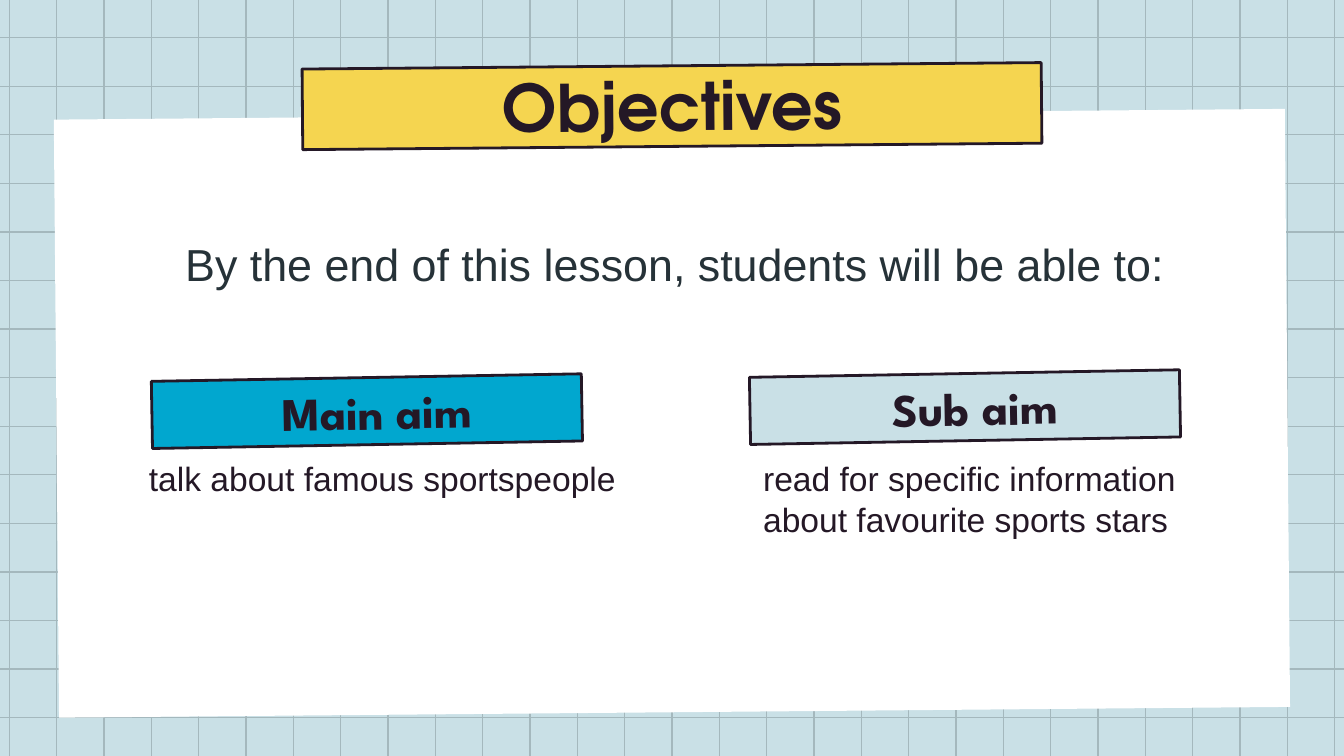
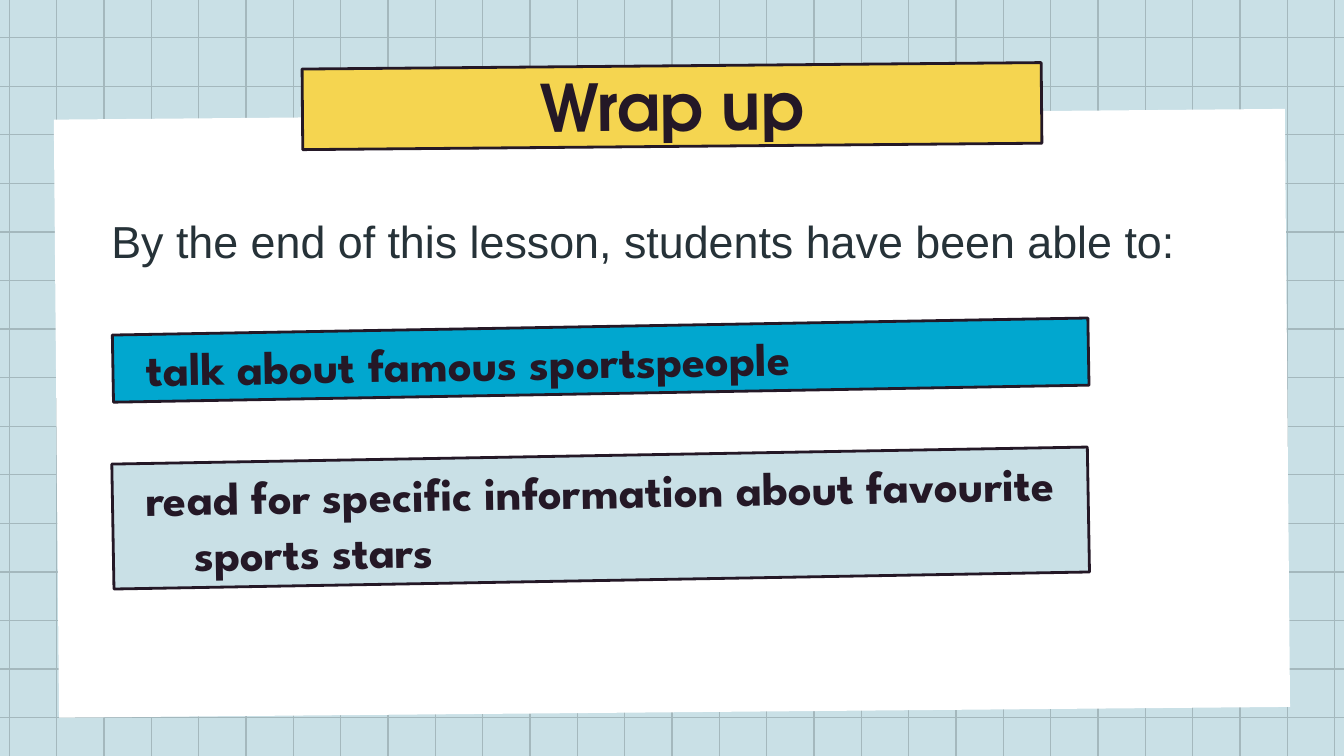
from pptx import Presentation
from pptx.dml.color import RGBColor
from pptx.enum.shapes import MSO_CONNECTOR, MSO_SHAPE
from pptx.enum.text import MSO_ANCHOR, PP_ALIGN
from pptx.oxml.ns import qn
from pptx.util import Inches, Pt
from lxml.etree import SubElement

SLIDE_WIDTH = 10
SLIDE_HEIGHT = SLIDE_WIDTH * 9 / 16
INK = "241826"
SLATE = "263238"
PALE_BLUE = "C9E0E6"
BLUE = "01A7CF"
YELLOW = "F5D550"
WHITE = "FFFFFF"
GRID = "A4B8BD"
TITLE_FONT = "TeX Gyre Adventor"
LABEL_FONT = "League Spartan"
BODY_FONT = "Arial"


def color(value):
    return RGBColor.from_string(value)


def add_grid_line(group, *ends):
    line = group.shapes.add_connector(
        MSO_CONNECTOR.STRAIGHT, *[Inches(end) for end in ends]
    )
    line.line.color.rgb = color(GRID)
    line.line.width = Pt(0.75)
    SubElement(line._element.spPr, qn("a:effectLst"))


def add_grid(slide):
    group = slide.shapes.add_group_shape()
    columns, rows = 28, 14
    for column in range(columns + 1):
        x = 0.07 + column * (9.93 - 0.07) / columns
        add_grid_line(group, x, -0.05, x, 5.7)
    for row in range(rows + 1):
        y = 0.28 + row * (5.34 - 0.28) / rows
        add_grid_line(group, -0.16, y, 10.15, y)


def add_band(slide, box, fill, rotation, outline=INK):
    band = slide.shapes.add_shape(
        MSO_SHAPE.RECTANGLE, *[Inches(length) for length in box]
    )
    band.shadow.inherit = False
    band.rotation = rotation
    band.fill.solid()
    band.fill.fore_color.rgb = color(fill)
    if outline:
        band.line.color.rgb = color(outline)
        band.line.width = Pt(1.5)
    else:
        band.line.fill.background()
    return band


def write(shape, text, size, font, ink=INK, bold=False, align=PP_ALIGN.LEFT,
          anchor=MSO_ANCHOR.TOP, inset=(0.1, 0.1), hanging=False):
    frame = shape.text_frame
    frame.word_wrap = True
    frame.vertical_anchor = anchor
    frame.margin_left = frame.margin_right = Inches(inset[0])
    frame.margin_top = frame.margin_bottom = Inches(inset[1])
    paragraph = frame.paragraphs[0]
    paragraph.alignment = align
    if hanging:
        properties = paragraph._p.get_or_add_pPr()
        properties.set("marL", str(Inches(0.5)))
        properties.set("indent", str(Inches(-0.35)))
    run = paragraph.add_run()
    run.text = text
    run.font.size = Pt(size)
    run.font.name = font
    run.font.bold = bold
    run.font.color.rgb = color(ink)


def add_label(slide, box, fill, text, align=PP_ALIGN.LEFT):
    label = add_band(slide, box, fill, 359)
    write(label, text, 25, LABEL_FONT, bold=True, align=align,
          anchor=MSO_ANCHOR.MIDDLE, hanging=True)


def add_text(slide, box, text, size, **style):
    text_box = slide.shapes.add_textbox(*[Inches(length) for length in box])
    write(text_box, text, size, BODY_FONT, **style)


def add_lead(slide, box, text):
    add_text(slide, box, text, 24, ink=SLATE, inset=(0.1, 0.05))


def add_page(presentation, title):
    slide = presentation.slides.add_slide(presentation.slide_layouts[6])
    slide.background.fill.solid()
    slide.background.fill.fore_color.rgb = color(PALE_BLUE)
    add_grid(slide)
    add_band(slide, (0.42, 0.85, 9.16, 4.45), WHITE, 359.5, outline=None)
    banner = add_band(slide, (2.25, 0.49, 5.5, 0.6), YELLOW, 359.5)
    write(banner, title, 35, TITLE_FONT, bold=True,
          align=PP_ALIGN.CENTER, inset=(0, 0))
    return slide


def add_objectives(presentation):
    slide = add_page(presentation, "Objectives")
    add_label(slide, (1.13, 2.81, 3.2, 0.5), BLUE, "Main aim", PP_ALIGN.CENTER)
    add_label(slide, (5.58, 2.78, 3.2, 0.5), PALE_BLUE, "Sub aim", PP_ALIGN.CENTER)
    add_text(slide, (0.86, 3.31, 3.87, 1.11),
             "talk about famous sportspeople", 18, hanging=True)
    add_text(slide, (5.58, 3.31, 3.87, 1.11),
             "read for specific information about favourite sports stars", 18)
    add_lead(slide, (1.28, 1.71, 7.57, 0.5),
             "By the end of this lesson, students will be able to:")


def add_wrap_up(presentation):
    slide = add_page(presentation, "Wrap up")
    add_label(slide, (0.84, 2.43, 7.26, 0.5), BLUE,
              "talk about famous sportspeople")
    add_label(slide, (0.84, 3.39, 7.26, 0.93), PALE_BLUE,
              "read for specific information about favourite sports stars")
    add_lead(slide, (0.73, 1.54, 8.35, 0.83),
             "By the end of this lesson, students have been able to:")


def main():
    presentation = Presentation()
    presentation.slide_width = Inches(SLIDE_WIDTH)
    presentation.slide_height = Inches(SLIDE_HEIGHT)
    add_objectives(presentation)
    add_wrap_up(presentation)
    presentation.save("out.pptx")


if __name__ == "__main__":
    main()
